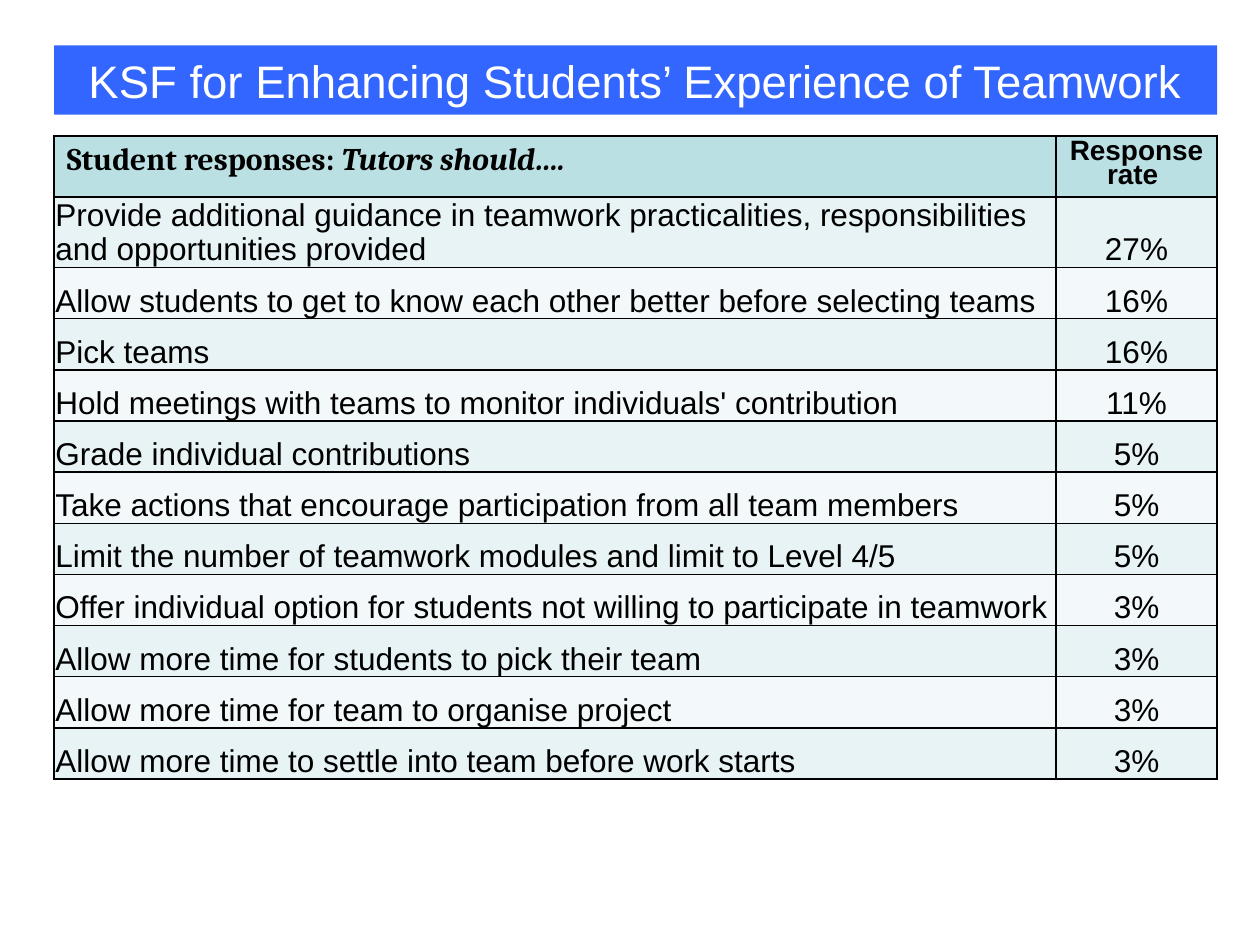
from lxml.etree import SubElement
from pptx import Presentation
from pptx.dml.color import RGBColor
from pptx.enum.text import MSO_ANCHOR as Anchor, MSO_AUTO_SIZE as AutoSize, PP_ALIGN as Align
from pptx.oxml.ns import qn
from pptx.util import Inches, Pt

WHITE = RGBColor(0xFF, 0xFF, 0xFF)
BLACK = RGBColor(0x00, 0x00, 0x00)
BLUE = RGBColor(0x33, 0x66, 0xFF)
HEADER_TEAL = RGBColor(0xBB, 0xE0, 0xE3)
BAND_COLORS = [RGBColor(0xE7, 0xF3, 0xF4), RGBColor(0xF3, 0xF9, 0xFA)]

LEFT, WIDTH = 0.43, 9.23
RATE_WIDTH = 1.28
TABLE_TOP, TABLE_HEIGHT = 1.08, 5.1
HEADER_HEIGHT, TALL_HEIGHT = 0.48, 0.56

RESPONSES = [
    ("Provide additional guidance in teamwork practicalities, responsibilities "
     "and opportunities provided", "27%"),
    ("Allow students to get to know each other better before selecting teams", "16%"),
    ("Pick teams", "16%"),
    ("Hold meetings with teams to monitor individuals' contribution", "11%"),
    ("Grade individual contributions", "5%"),
    ("Take actions that encourage participation from all team members", "5%"),
    ("Limit the number of teamwork modules and limit to Level 4/5", "5%"),
    ("Offer individual option for students not willing to participate in teamwork", "3%"),
    ("Allow more time for students to pick their team", "3%"),
    ("Allow more time for team to organise project", "3%"),
    ("Allow more time to settle into team before work starts", "3%"),
]


def add_run(paragraph, text, color=BLACK, **font_format):
    run = paragraph.add_run()
    run.text = text
    run.font.color.rgb = color
    for name, value in font_format.items():
        setattr(run.font, name, value)


def style_cell(cell, fill_color):
    """Draw the four borders, then fill the cell; the XML needs this order."""
    properties = cell._tc.get_or_add_tcPr()
    for side in ("lnL", "lnR", "lnT", "lnB"):
        line = SubElement(properties, qn(f"a:{side}"), w=str(Pt(1)))
        fill = SubElement(line, qn("a:solidFill"))
        SubElement(fill, qn("a:srgbClr"), val=str(BLACK))
    cell.fill.solid()
    cell.fill.fore_color.rgb = fill_color


presentation = Presentation()
presentation.slide_width = Inches(10)
presentation.slide_height = Inches(7.5)
slide = presentation.slides.add_slide(presentation.slide_layouts[5])

# Title bar
title = slide.shapes.title
title.left, title.top = Inches(LEFT), Inches(0.36)
title.width, title.height = Inches(WIDTH), Inches(0.55)
title.fill.solid()
title.fill.fore_color.rgb = BLUE
title.text_frame.auto_size = AutoSize.NONE
title.text_frame.vertical_anchor = Anchor.MIDDLE
paragraph = title.text_frame.paragraphs[0]
paragraph.alignment = Align.CENTER
paragraph.space_after = Pt(6)
add_run(paragraph, "KSF for Enhancing Students’ Experience of Teamwork", WHITE,
        name="Arial", size=Pt(26))

# Table grid
table = slide.shapes.add_table(
    len(RESPONSES) + 1, 2, Inches(LEFT), Inches(TABLE_TOP),
    Inches(WIDTH), Inches(TABLE_HEIGHT)).table
table.columns[0].width = Inches(WIDTH - RATE_WIDTH)
table.columns[1].width = Inches(RATE_WIDTH)
row_height = (TABLE_HEIGHT - HEADER_HEIGHT - TALL_HEIGHT) / (len(RESPONSES) - 1)
for row in table.rows:
    row.height = Inches(row_height)
table.rows[0].height = Inches(HEADER_HEIGHT)
table.rows[1].height = Inches(TALL_HEIGHT)

# Header row
response_header, rate_header = table.rows[0].cells
for cell in (response_header, rate_header):
    style_cell(cell, HEADER_TEAL)
paragraph = response_header.text_frame.paragraphs[0]
header_font = {"name": "Cambria", "size": Pt(18), "bold": True}
add_run(paragraph, "Student responses: ", italic=False, **header_font)
add_run(paragraph, "Tutors should….", italic=True, **header_font)
paragraph = rate_header.text_frame.paragraphs[0]
paragraph.alignment = Align.CENTER
paragraph.line_spacing = Pt(13.8)
add_run(paragraph, "Response rate ", name="Arial", size=Pt(16), bold=True)

# Response rows
cell_format = {
    "vertical_anchor": Anchor.BOTTOM,
    "margin_left": Inches(0.01),
    "margin_right": Inches(0.01),
    "margin_top": Inches(0.01),
    "margin_bottom": 0,
}
for index, response in enumerate(RESPONSES):
    cells = table.rows[index + 1].cells
    for cell, text, alignment in zip(cells, response, (Align.LEFT, Align.CENTER)):
        style_cell(cell, BAND_COLORS[index % 2])
        for name, value in cell_format.items():
            setattr(cell, name, value)
        paragraph = cell.text_frame.paragraphs[0]
        paragraph.alignment = alignment
        paragraph.line_spacing = Pt(19.6)
        add_run(paragraph, text, name="Arial", size=Pt(18), bold=False)

presentation.save("out.pptx")
